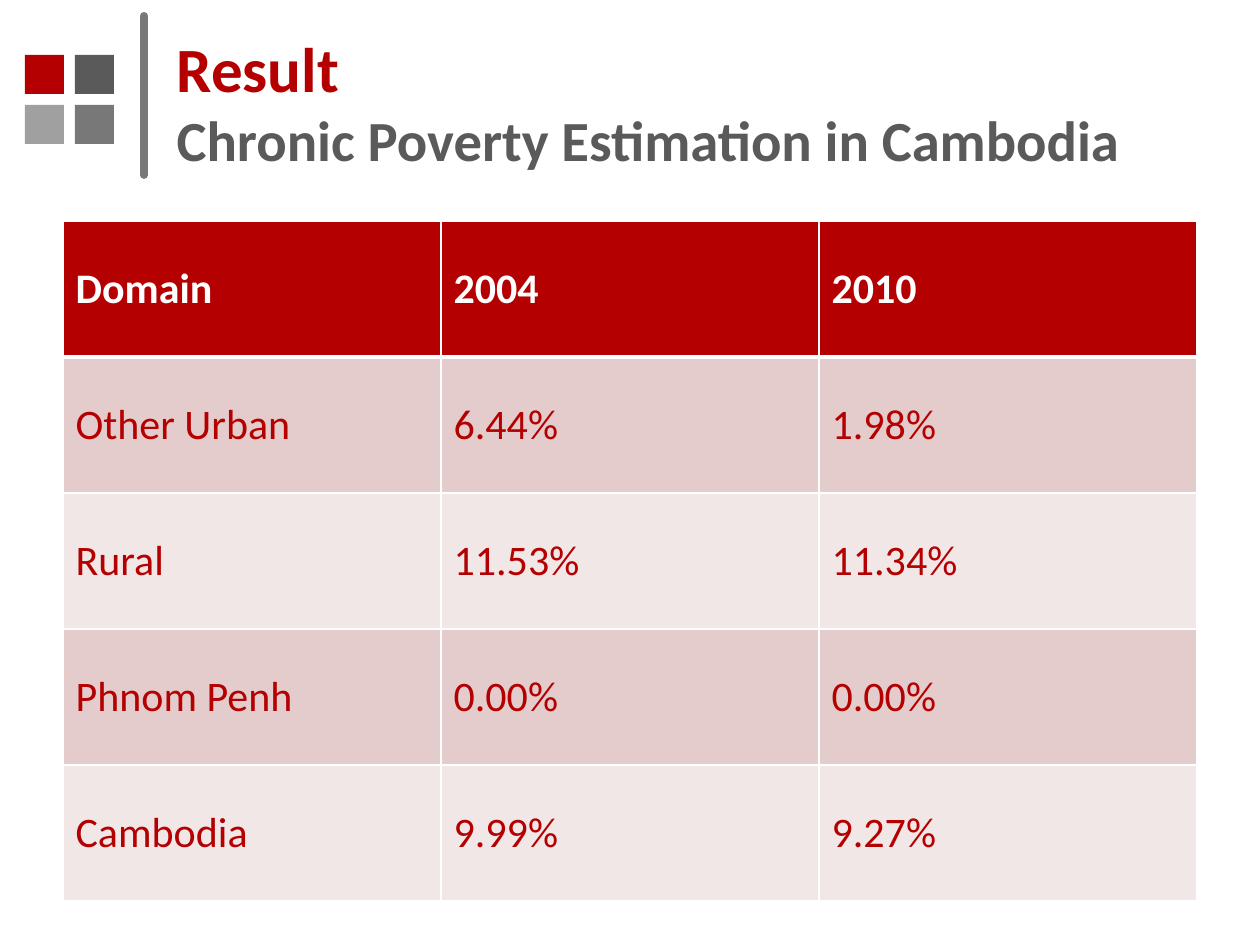
import copy

import lxml.etree
import pptx
import pptx.dml.color
import pptx.enum.shapes
import pptx.enum.text
import pptx.oxml.ns
import pptx.util

RGB = pptx.dml.color.RGBColor
RED = RGB(0xB4, 0x00, 0x00)
DARK_GRAY = RGB(0x5A, 0x5A, 0x5A)
MID_GRAY = RGB(0x78, 0x78, 0x78)
LIGHT_GRAY = RGB(0xA0, 0xA0, 0xA0)
WHITE = RGB(0xFF, 0xFF, 0xFF)
BANDS = (RGB(0xE5, 0xCC, 0xCC), RGB(0xF2, 0xE7, 0xE7))
FONT = "Calibri"

ROWS = (
    ("Domain", "2004", "2010"),
    ("Other Urban", "6.44%", "1.98%"),
    ("Rural", "11.53%", "11.34%"),
    ("Phnom Penh", "0.00%", "0.00%"),
    ("Cambodia", "9.99%", "9.27%"),
)


def px(n):
    """Convert pixels at 126 to the inch into EMU."""
    return pptx.util.Emu(round(n * 914400 / 126))


def sub(parent, tag, **attrs):
    """Append a DrawingML element to a parent."""
    return lxml.etree.SubElement(parent, pptx.oxml.ns.qn(tag), **attrs)


def style_run(r, size, color, bold):
    """Format the font of a run."""
    r.font.name = FONT
    r.font.size = pptx.util.Pt(size)
    r.font.color.rgb = color
    r.font.bold = bold


def add_squares(s):
    """Add the two by two block of squares."""
    for i, color in enumerate((RED, DARK_GRAY, LIGHT_GRAY, MID_GRAY)):
        row, col = divmod(i, 2)
        sp = s.shapes.add_shape(
            pptx.enum.shapes.MSO_SHAPE.RECTANGLE,
            px(25 + 50 * col), px(55 + 50 * row), px(39), px(39))
        sp.shadow.inherit = False
        sp.fill.solid()
        sp.fill.fore_color.rgb = color
        sp.line.fill.background()


def add_divider(s):
    """Add the round-capped vertical line beside the title."""
    line = s.shapes.add_connector(
        pptx.enum.shapes.MSO_CONNECTOR.STRAIGHT, px(144), px(16), px(144), px(175))
    line.line.color.rgb = MID_GRAY
    line.line.width = pptx.util.Pt(4.5)
    line.line._get_or_add_ln().set("cap", "rnd")
    sub(line._element.spPr, "a:effectLst")


def set_title(s):
    """Place the title and format its two lines."""
    sp = s.shapes.title
    sp.left, sp.top, sp.width, sp.height = px(164), px(37), px(1003), px(129)
    tf = sp.text_frame
    tf.auto_size = pptx.enum.text.MSO_AUTO_SIZE.NONE
    tf.vertical_anchor = pptx.enum.text.MSO_ANCHOR.MIDDLE
    p = tf.paragraphs[0]
    p.text = "Result\vChronic Poverty Estimation in Cambodia"
    p.alignment = pptx.enum.text.PP_ALIGN.LEFT
    heading, subtitle = p.runs
    style_run(heading, 36, RED, True)
    style_run(subtitle, 32.4, DARK_GRAY, True)
    br = p._p.find(pptx.oxml.ns.qn("a:br"))
    br.append(copy.deepcopy(heading._r.rPr))


def set_borders(cell, bottom):
    """Draw white cell borders with the given bottom width in points."""
    tcPr = cell._tc.get_or_add_tcPr()
    for side, width in (("L", 1), ("R", 1), ("T", 1), ("B", bottom)):
        ln = sub(tcPr, f"a:ln{side}", w=str(pptx.util.Pt(width)))
        sub(sub(ln, "a:solidFill"), "a:srgbClr", val=str(WHITE))


def style_cell(cell, row):
    """Format a cell as header or banded body by its row."""
    header = row == 0
    set_borders(cell, 3 if row == 0 else 1)
    cell.fill.solid()
    cell.fill.fore_color.rgb = RED if header else BANDS[(row - 1) % 2]
    cell.vertical_anchor = pptx.enum.text.MSO_ANCHOR.MIDDLE
    r = cell.text_frame.paragraphs[0].runs[0]
    style_run(r, 24, WHITE if header else RED, header)


def add_poverty_table(s):
    """Add the table of poverty rates by domain."""
    table = s.shapes.add_table(
        len(ROWS), len(ROWS[0]), px(63), px(221), px(1134), px(680)).table
    for i, values in enumerate(ROWS):
        for j, value in enumerate(values):
            cell = table.cell(i, j)
            cell.text_frame.text = value
            style_cell(cell, i)


def main():
    """Build and save the slide."""
    prs = pptx.Presentation()
    prs.slide_width, prs.slide_height = px(1260), px(945)
    s = prs.slides.add_slide(prs.slide_layouts[5])
    add_squares(s)
    add_divider(s)
    set_title(s)
    add_poverty_table(s)
    prs.save("out.pptx")


if __name__ == "__main__":
    main()
